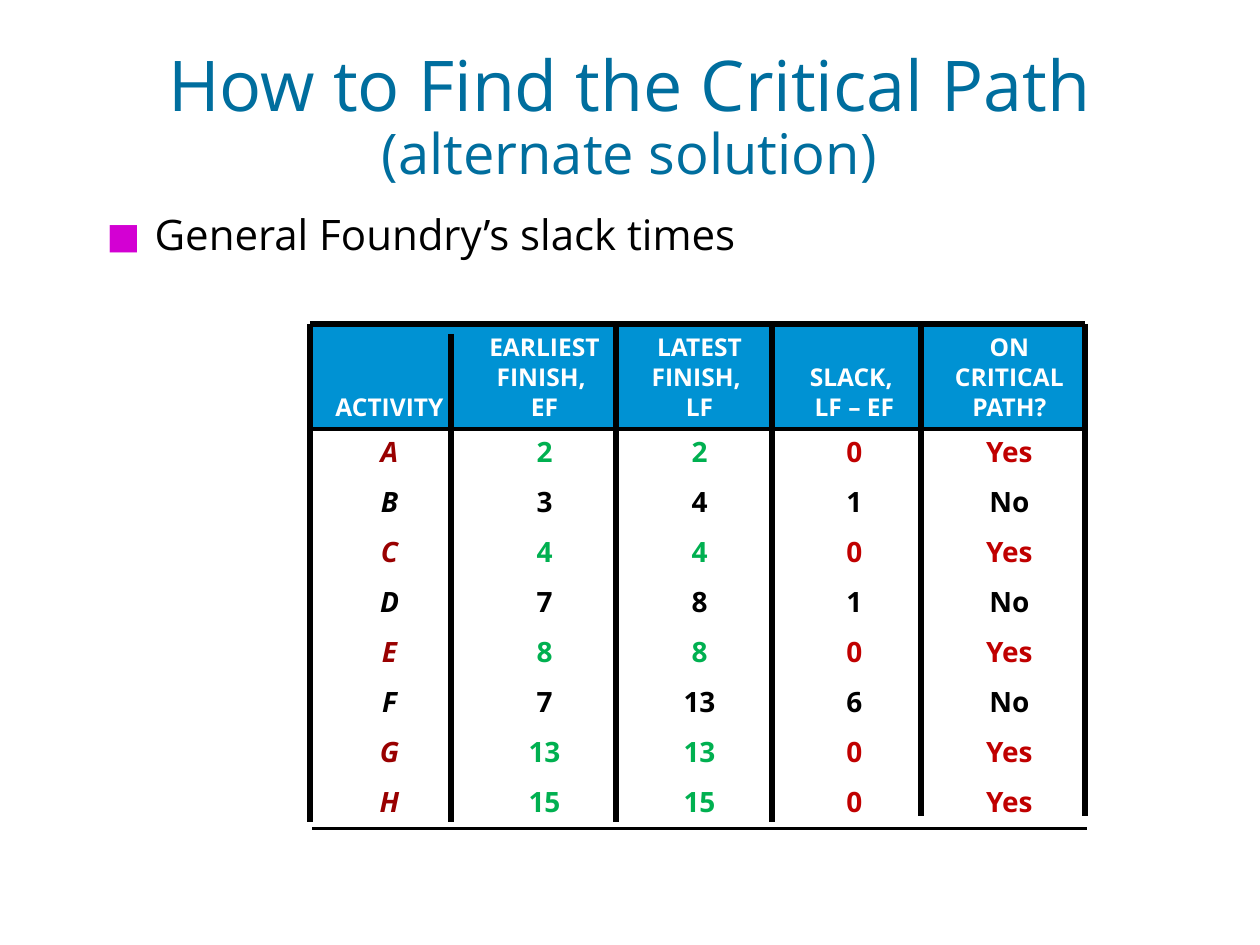
from lxml.etree import SubElement
from pptx import Presentation
from pptx.dml.color import RGBColor as RGB
from pptx.enum.shapes import MSO_CONNECTOR as LINK
from pptx.enum.text import MSO_ANCHOR as ANCHOR, PP_ALIGN as ALIGN
from pptx.oxml.ns import qn
from pptx.util import Emu, Pt

FACE = "Open Sans"
BLACK = RGB(0x00, 0x00, 0x00)
WHITE = RGB(0xFF, 0xFF, 0xFF)
TEAL = RGB(0x00, 0x6E, 0x9E)
BLUE = RGB(0x00, 0x92, 0xD3)
MAROON = RGB(0x99, 0x00, 0x00)
RED = RGB(0xC0, 0x00, 0x00)
GREEN = RGB(0x00, 0xB0, 0x50)
PINK = RGB(0xD3, 0x00, 0xD3)


def px(n):
    return Emu(round(n * 914400 / 126))


def style(font, size, color, bold=None, italic=None):
    font.name, font.size, font.color.rgb = FACE, Pt(size), color
    font.bold, font.italic = bold, italic


deck = Presentation()
deck.slide_width, deck.slide_height = px(1260), px(945)
slide = deck.slides.add_slide(deck.slide_layouts[1])
title, body = slide.placeholders

title.left, title.top, title.width, title.height = map(px, (94, 54, 1071, 130))
title.text_frame.vertical_anchor = ANCHOR.MIDDLE
para = title.text_frame.paragraphs[0]
para.alignment, para.line_spacing = ALIGN.CENTER, 0.9
for part, size in (("How to Find the Critical Path", 40), ("(alternate solution)", 32)):
    if para.runs:
        para.add_line_break()
    run = para.add_run()
    run.text = part
    style(run.font, size, TEAL)

body.left, body.top, body.width, body.height = map(px, (94, 208, 1071, 70))
para = body.text_frame.paragraphs[0]
para.text = "General Foundry’s slack times"
para.line_spacing = 0.9
style(para.font, 24, BLACK)
props = para._p.get_or_add_pPr()
props.set("marL", str(px(48)))
props.set("indent", str(px(-48)))
tint = SubElement(props, qn("a:buClr"))
SubElement(tint, qn("a:srgbClr"), val=str(PINK))
SubElement(props, qn("a:buSzPct"), val="85000")
SubElement(props, qn("a:buFont"), typeface=FACE)
SubElement(props, qn("a:buChar"), char="■")
props.append(props.find(qn("a:defRPr")))

heads = ["ACTIVITY", "EARLIEST FINISH, \vEF", "LATEST FINISH, \vLF",
         "SLACK, \vLF – EF", "ON CRITICAL PATH?"]
times = [("A", 2, 2), ("B", 3, 4), ("C", 4, 4), ("D", 7, 8),
         ("E", 8, 8), ("F", 7, 13), ("G", 13, 13), ("H", 15, 15)]
rows = [heads] + [(name, ef, lf, lf - ef, "No" if lf > ef else "Yes")
                  for name, ef, lf in times]
hues = [MAROON, GREEN, GREEN, RED, RED]

frame = slide.shapes.add_table(len(rows), len(heads), px(312), px(326), px(775), px(492))
table = frame.table
table.first_row = table.horz_banding = False
for col in table.columns:
    col.width = px(155)
for r, row in enumerate(rows):
    table.rows[r].height = px(50 if r else 92)
    for c, value in enumerate(row):
        cell = table.cell(r, c)
        para = cell.text_frame.paragraphs[0]
        para.text = str(value)
        para.alignment, para.line_spacing = ALIGN.CENTER, 0.9
        edges = ["a:lnT"] if r == 1 else []
        if r in (0, len(times)):
            edges.append("a:lnB")
        for edge in ("a:lnL", "a:lnR", "a:lnT", "a:lnB"):
            line = SubElement(cell._tc.get_or_add_tcPr(), qn(edge), w=str(Pt(2.25)))
            if edge in edges:
                fill = SubElement(line, qn("a:solidFill"))
                SubElement(fill, qn("a:srgbClr"), val=str(BLACK))
            else:
                SubElement(line, qn("a:noFill"))
        if r == 0:
            cell.vertical_anchor = ANCHOR.BOTTOM
            cell.fill.solid()
            cell.fill.fore_color.rgb = BLUE
            style(para.font, 14, WHITE, True)
        else:
            cell.fill.background()
            hue = hues[c] if row[-1] == "Yes" else BLACK
            style(para.font, 16, hue, True, c == 0)

rules = [(x, 324, x, 822) for x in (310, 616, 772)]
rules += [(x, 324, x, 816) for x in (921, 1085)]
rules += [(451, 334, 451, 822), (310, 324, 1085, 324)]
for ends in rules:
    rule = slide.shapes.add_connector(LINK.STRAIGHT, *map(px, ends))
    rule.line.color.rgb, rule.line.width = BLACK, Pt(3)
    SubElement(rule._element.spPr, qn("a:effectLst"))

deck.save("out.pptx")
